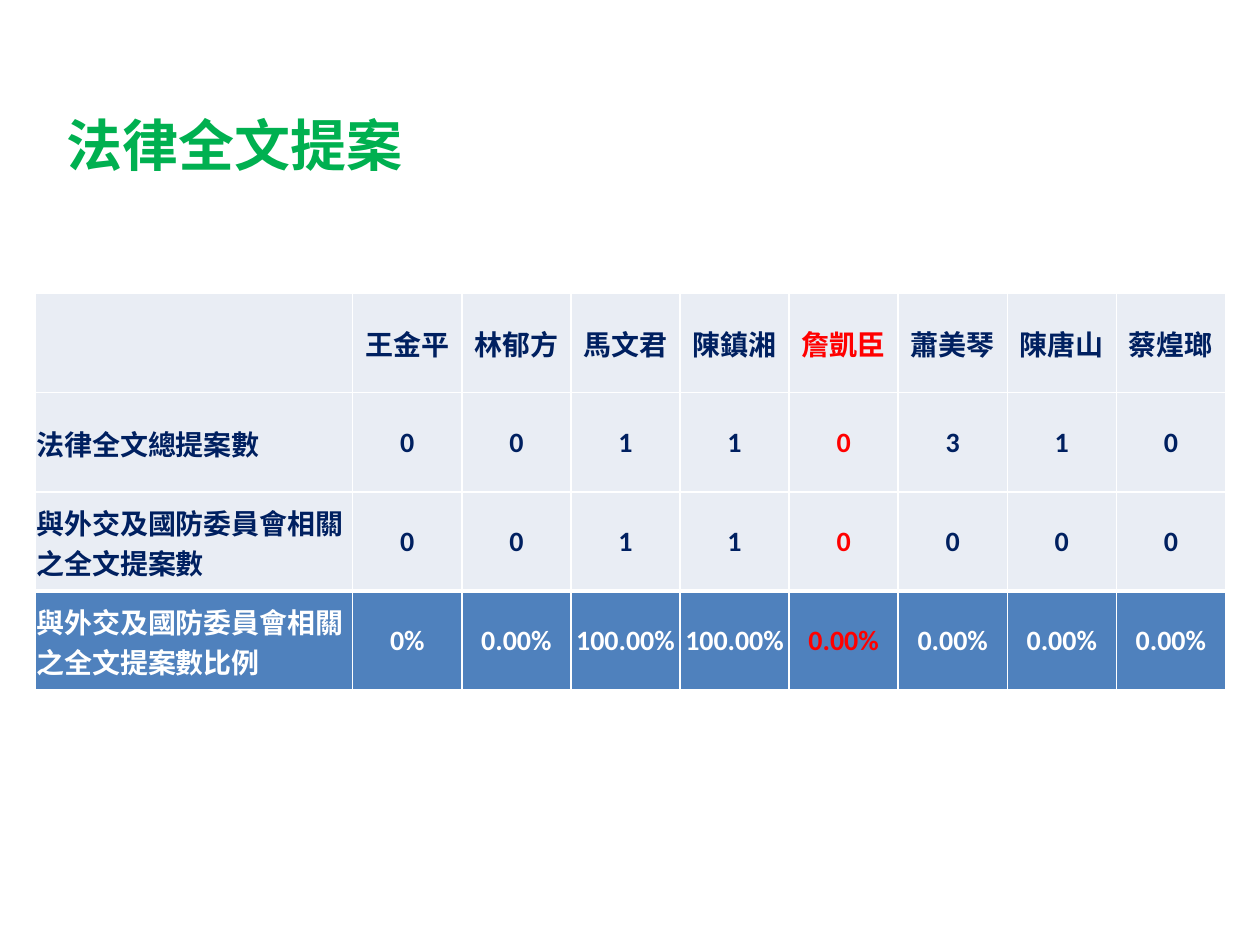
"""Build a one-slide table of full-text bill proposals per legislator."""
from lxml.etree import SubElement
from pptx import Presentation
from pptx.dml.color import RGBColor
from pptx.enum.text import MSO_ANCHOR, MSO_AUTO_SIZE, PP_ALIGN
from pptx.oxml.ns import qn
from pptx.util import Inches, Pt

NAVY, RED, GREEN, WHITE = "002060", "FF0000", "00B050", "FFFFFF"
PALE, BLUE = "E9EDF4", "4F81BD"


def style(paragraph, typeface, size, color):
    font = paragraph.font
    font.name, font.size, font.bold = typeface, Pt(size), True
    font.color.rgb = RGBColor.from_string(color)


def add_border(cell, side, width):
    line = SubElement(cell._tc.get_or_add_tcPr(), qn(f"a:ln{side}"), w=str(Pt(width)))
    SubElement(SubElement(line, qn("a:solidFill")), qn("a:srgbClr"), val=WHITE)


proposals = [
    ["", "王金平", "林郁方", "馬文君", "陳鎮湘", "詹凱臣", "蕭美琴", "陳唐山", "蔡煌瑯"],
    ["法律全文總提案數", "0", "0", "1", "1", "0", "3", "1", "0"],
    ["與外交及國防委員會相關之全文提案數", "0", "0", "1", "1", "0", "0", "0", "0"],
    ["與外交及國防委員會相關之全文提案數比例", "0%", "0.00%", "100.00%", "100.00%",
     "0.00%", "0.00%", "0.00%", "0.00%"],
]
highlighted = proposals[0].index("詹凱臣")
ratio_row = len(proposals) - 1
label_width, member_width, row_height = Inches(2.52), Inches(0.866), Inches(0.787)

prs = Presentation()
prs.slide_width, prs.slide_height = Inches(10), Inches(7.5)
slide = prs.slides.add_slide(prs.slide_layouts[6])

members = len(proposals[0]) - 1
table = slide.shapes.add_table(
    len(proposals), members + 1, Inches(0.28), Inches(2.33),
    label_width + members * member_width, len(proposals) * row_height).table
table.first_row = table.horz_banding = False
for c, column in enumerate(table.columns):
    column.width = member_width if c else label_width

for r, values in enumerate(proposals):
    table.rows[r].height = row_height
    for c, value in enumerate(values):
        cell = table.cell(r, c)
        for side in "LRTB":
            add_border(cell, side, 3 if r == ratio_row and side == "T" else 1)
        cell.fill.solid()
        cell.fill.fore_color.rgb = RGBColor.from_string(BLUE if r == ratio_row else PALE)
        cell.margin_left = cell.margin_right = cell.margin_top = Inches(0.01)
        cell.margin_bottom = 0
        cell.vertical_anchor = MSO_ANCHOR.MIDDLE
        cell.text = value
        paragraph = cell.text_frame.paragraphs[0]
        paragraph.alignment = PP_ALIGN.CENTER if c else PP_ALIGN.LEFT
        color = RED if c == highlighted else WHITE if r == ratio_row else NAVY
        style(paragraph, "Calibri", 16, color)

title = slide.shapes.add_textbox(
    Inches(0.43), Inches(0.83), Inches(2.89), Inches(0.64)).text_frame
title.word_wrap = False
title.auto_size = MSO_AUTO_SIZE.SHAPE_TO_FIT_TEXT
title.text = "法律全文提案"
style(title.paragraphs[0], "Noto Sans CJK SC", 32, GREEN)

prs.save("out.pptx")
